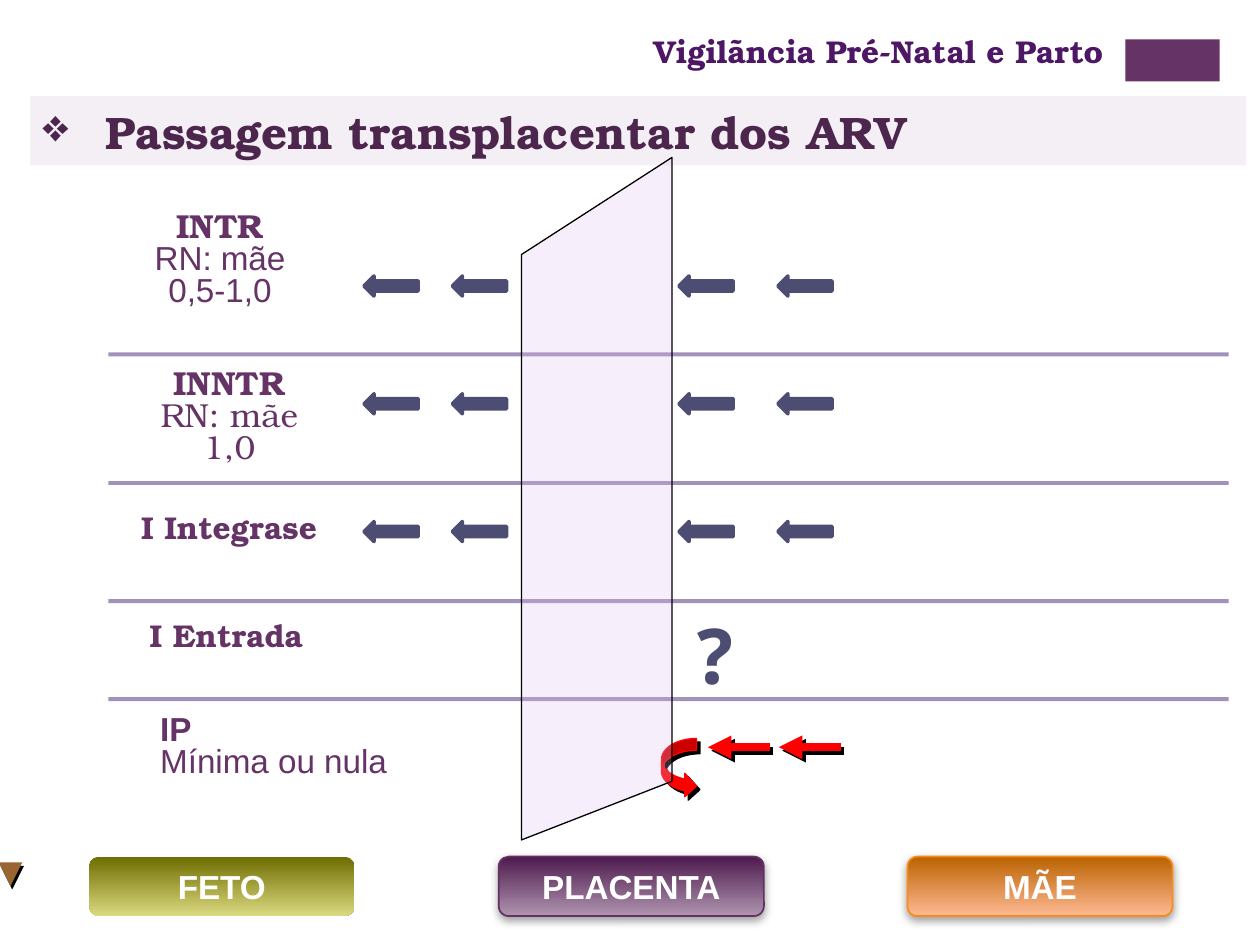
from lxml import etree
from pptx import Presentation
from pptx.dml.color import RGBColor
from pptx.enum.shapes import MSO_CONNECTOR as CONNECTOR, MSO_SHAPE as SHAPE
from pptx.enum.text import MSO_ANCHOR as ANCHOR, MSO_AUTO_SIZE as AUTO_SIZE, PP_ALIGN as ALIGN
from pptx.oxml.ns import qn
from pptx.util import Pt

SERIF, SANS, MONO = "TeX Gyre Bonum", "Arial", "Noto Sans Mono"
PURPLE, SLATE, RED = "663366", "4D4D73", "FF0000"
color = RGBColor.from_string


def add_text(box, lines, size, fill, align=ALIGN.LEFT, spacing=None):
    shape = slide.shapes.add_textbox(*map(Pt, box))
    frame = shape.text_frame
    frame.word_wrap = True
    frame.auto_size = AUTO_SIZE.SHAPE_TO_FIT_TEXT
    frame.text = "\n".join(text for text, name, bold in lines)
    for paragraph, (text, name, bold) in zip(frame.paragraphs, lines):
        paragraph.alignment = align
        paragraph.line_spacing = spacing
        font = paragraph.runs[0].font
        font.name, font.size, font.bold = name, Pt(size), bold
        font.color.rgb = color(fill)
    return shape


def add_shadow(previous, fill="000000", alpha=100, blur=0, distance=2.8, angle=45):
    effects = etree.Element(qn("a:effectLst"))
    shadow = etree.SubElement(
        effects, qn("a:outerShdw"), blurRad=str(Pt(blur)), dist=str(Pt(distance)),
        dir=str(angle * 60000), algn="ctr", rotWithShape="0")
    tint = etree.SubElement(shadow, qn("a:srgbClr"), val=fill)
    etree.SubElement(tint, qn("a:alpha"), val=str(alpha * 1000))
    previous.addnext(effects)


presentation = Presentation()
presentation.slide_width, presentation.slide_height = Pt(720), Pt(540)
slide = presentation.slides.add_slide(presentation.slide_layouts[6])

for box, fill in [((643, 22.5, 54, 24), PURPLE), ((17.3, 55, 694.7, 39.5), "F3EFF5")]:
    band = slide.shapes.add_shape(SHAPE.RECTANGLE, *map(Pt, box))
    band.shadow.inherit = False
    band.fill.solid()
    band.fill.fore_color.rgb = color(fill)
    band.line.fill.background()

band.text_frame.text = "Passagem transplacentar dos ARV"
band.text_frame.vertical_anchor = ANCHOR.MIDDLE
title = band.text_frame.paragraphs[0]
title.alignment = ALIGN.LEFT
font = title.runs[0].font
font.name, font.size, font.bold = SERIF, Pt(26), True
font.color.rgb = color("4D264D")
properties = title._p.get_or_add_pPr()
properties.set("marL", str(Pt(36)))
properties.set("indent", str(Pt(-36)))
etree.SubElement(properties, qn("a:buChar"), char="❖")

add_text((144.7, 15, 499, 29), [("Vigilãncia Pré-Natal e Parto ", SERIF, True)], 18, "4E1765", ALIGN.RIGHT)

arrows = [
    (440, 427, 440 - 35.5, 427, RED, 2.8, 45),
    (480.5, 427, 480.5 - 35.5, 427, RED, 2.8, 45),
    (6, 506, 6, 506.3, "996633", 2.2, 63),
]
for x1, y1, x2, y2, fill, distance, angle in arrows:
    arrow = slide.shapes.add_connector(CONNECTOR.STRAIGHT, Pt(x1), Pt(y1), Pt(x2), Pt(y2))
    arrow.line.color.rgb = color(fill)
    arrow.line.width = Pt(4.5)
    outline = arrow.line._get_or_add_ln()
    etree.SubElement(outline, qn("a:tailEnd"), type="triangle")
    add_shadow(outline, distance=distance, angle=angle)

rebound = slide.shapes.add_shape(SHAPE.CURVED_RIGHT_ARROW, Pt(378), Pt(422), Pt(20), Pt(34))
for index, value in enumerate([0.336, 0.672, 0.333]):
    rebound.adjustments[index] = value
rebound.fill.solid()
rebound.fill.fore_color.rgb = color(RED)
rebound.line.color.rgb = color(RED)
rebound.line.width = Pt(0.75)
add_shadow(rebound.line._get_or_add_ln())

for y in [202.5, 276, 343.5, 399.5]:
    divider = slide.shapes.add_connector(CONNECTOR.STRAIGHT, Pt(62), Pt(y), Pt(702), Pt(y))
    divider.line.color.rgb = color("2C0664")
    divider.line.width = Pt(2.25)
    outline = divider.line._get_or_add_ln()
    etree.SubElement(outline.find(".//" + qn("a:srgbClr")), qn("a:alpha"), val="44000")
    etree.SubElement(divider._element.spPr, qn("a:effectLst"))

builder = slide.shapes.build_freeform(Pt(298), Pt(480))
builder.add_line_segments([(Pt(x), Pt(y)) for x, y in [(298, 145.5), (384, 90), (384, 446.5)]], close=True)
placenta = builder.convert_to_shape()
placenta.shadow.inherit = False
placenta.fill.solid()
placenta.fill.fore_color.rgb = color("DFB9EF")
placenta.line.color.rgb = color("000000")
placenta.line.width = Pt(0.75)
membrane = placenta._element.spPr.find(qn("a:solidFill") + "/" + qn("a:srgbClr"))
etree.SubElement(membrane, qn("a:alpha"), val="24000")

classes = [
    ((62, 118, 127.5, 63), [("INTR", SERIF, True), ("RN: mãe", SANS, False), ("0,5-1,0", SANS, False)],
     19, ALIGN.CENTER, 0.8),
    ((50.5, 208, 161, 63), [("INNTR", SERIF, True), ("RN: mãe", SERIF, False), ("1,0", SERIF, False)],
     19, ALIGN.CENTER, 0.8),
    ((73.5, 286.5, 140.5, 29), [("I Integrase", SERIF, True)], 18, ALIGN.LEFT, None),
    ((78.5, 348.5, 157.5, 29), [("I Entrada", SERIF, True)], 18, ALIGN.LEFT, None),
    ((84.5, 405.5, 157.5, 45), [("IP", SANS, True), ("Mínima ou nula", SANS, False)], 19, ALIGN.LEFT, 0.8),
]
for box, lines, size, align, spacing in classes:
    add_text(box, lines, size, PURPLE, align, spacing)

for y in [157.7, 225, 298]:
    for x in [208, 258.5, 388, 444.5]:
        passage = slide.shapes.add_shape(SHAPE.LEFT_ARROW, Pt(x), Pt(y), Pt(31), Pt(11.5))
        passage.shadow.inherit = False
        passage.fill.solid()
        passage.fill.fore_color.rgb = color(SLATE)
        passage.line.color.rgb = color(SLATE)
        passage.line.width = Pt(2)

add_text((388, 343.5, 56, 60.5), [("?", MONO, True)], 44, SLATE)

buttons = [
    ("FETO", 51, 85.5, "6E6D00", "DBD980", None),
    ("PLACENTA", 285, 127.5, "4D1A4D", "AF94AF", "653165"),
    ("MÃE", 518.5, 85.5, "BA6200", "FFB993", "F78D18"),
]
for label, x, label_width, top, bottom, border in buttons:
    button = slide.shapes.add_shape(SHAPE.ROUNDED_RECTANGLE, Pt(x), Pt(489.5), Pt(151.5), Pt(34))
    button.adjustments[0] = 0.167
    button.fill.gradient()
    button.fill.gradient_angle = 270
    for stop, fill in zip(button.fill.gradient_stops, [top, bottom]):
        stop.color.rgb = color(fill)
    if border:
        button.line.color.rgb = color(border)
        button.line.width = Pt(1)
        add_shadow(button.line._get_or_add_ln(), "808080", 75, 5, 2, 90)
    else:
        button.line.fill.background()
        button.shadow.inherit = False
    caption = add_text((x + (151.5 - label_width) / 2, 496, label_width, 25.5),
                       [(label, SANS, True)], 19, "FFFFFF", ALIGN.CENTER, 0.8)
    run = caption.text_frame.paragraphs[0].runs[0]
    add_shadow(run._r.get_or_add_rPr().find(qn("a:solidFill")), distance=2)

presentation.save("out.pptx")
